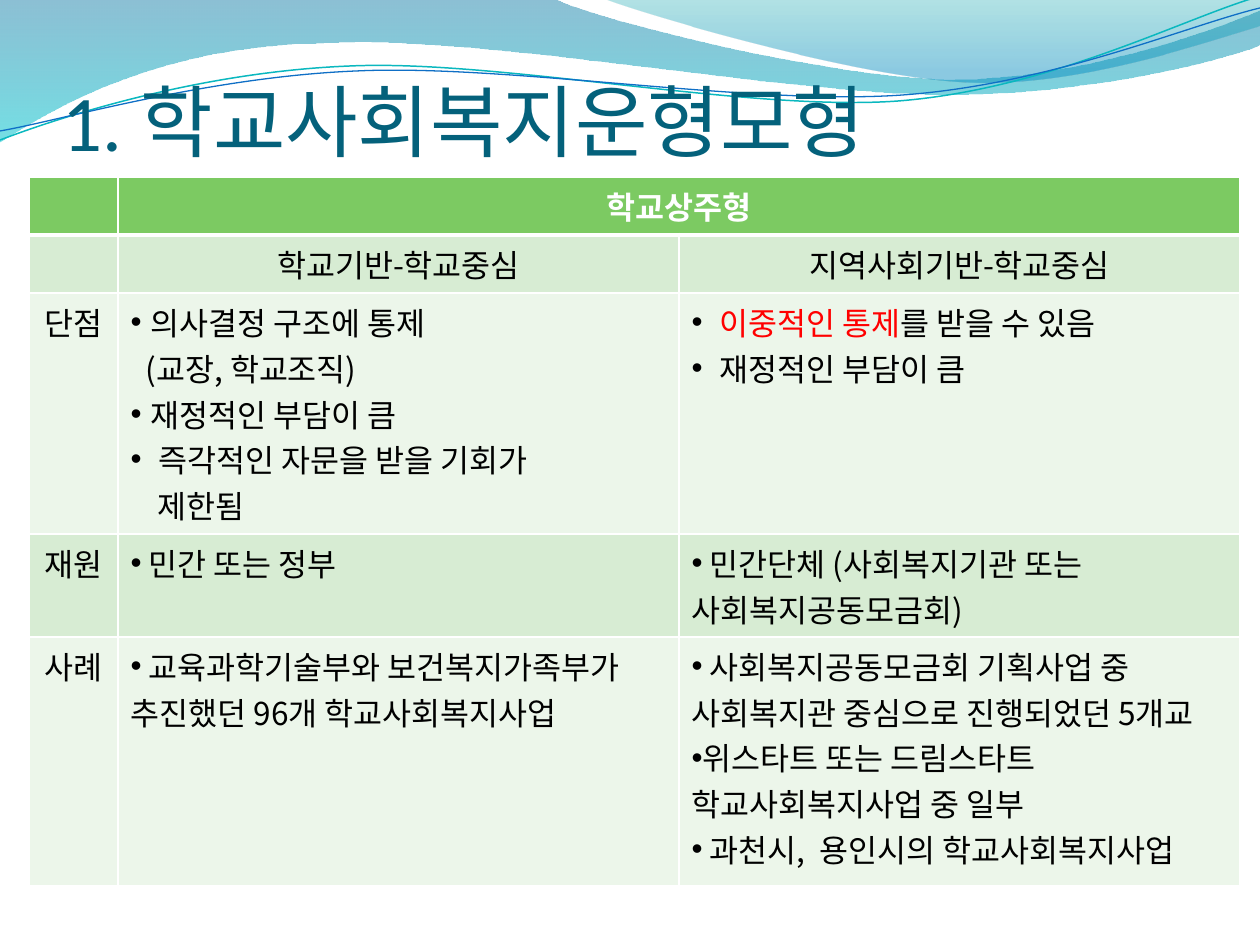
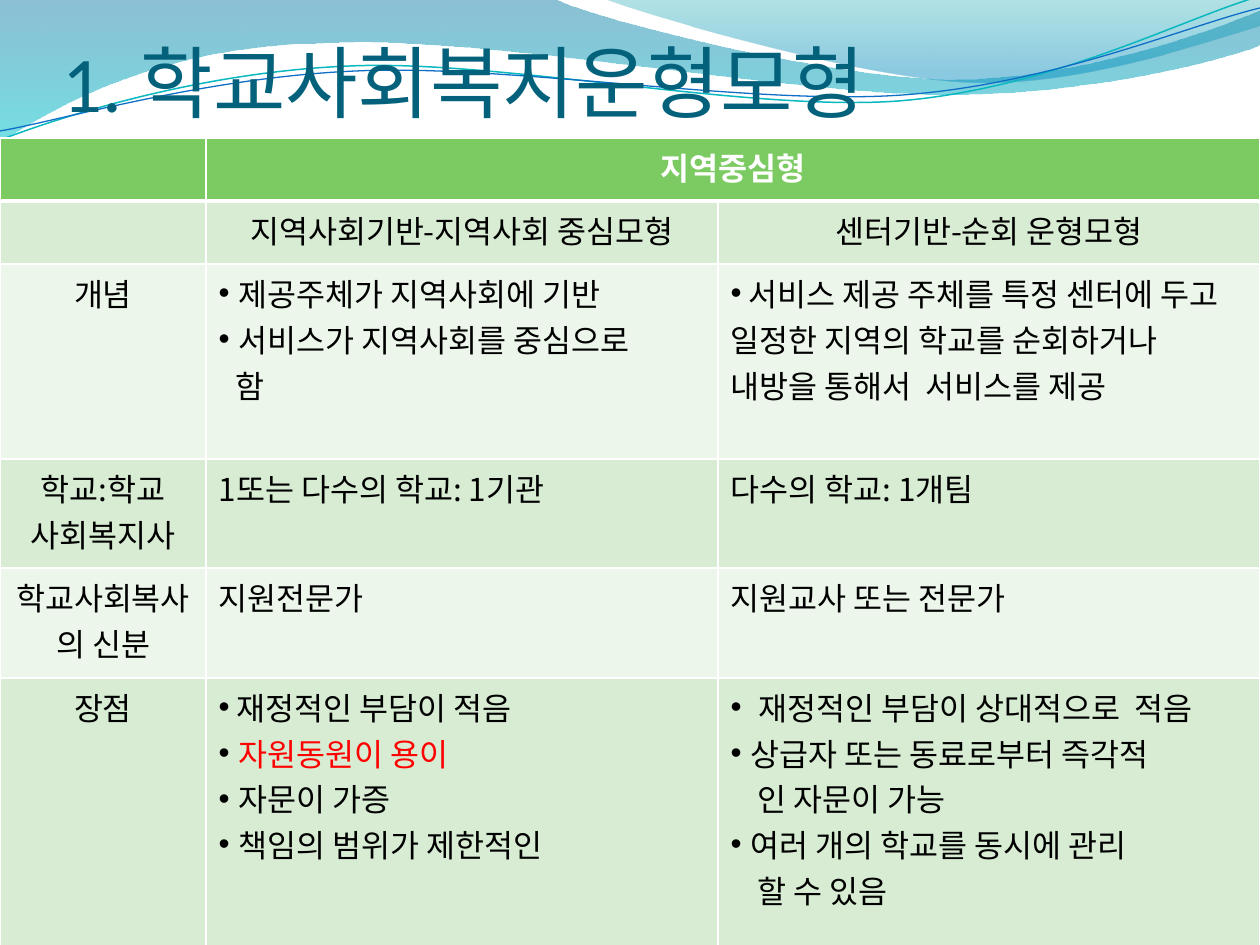
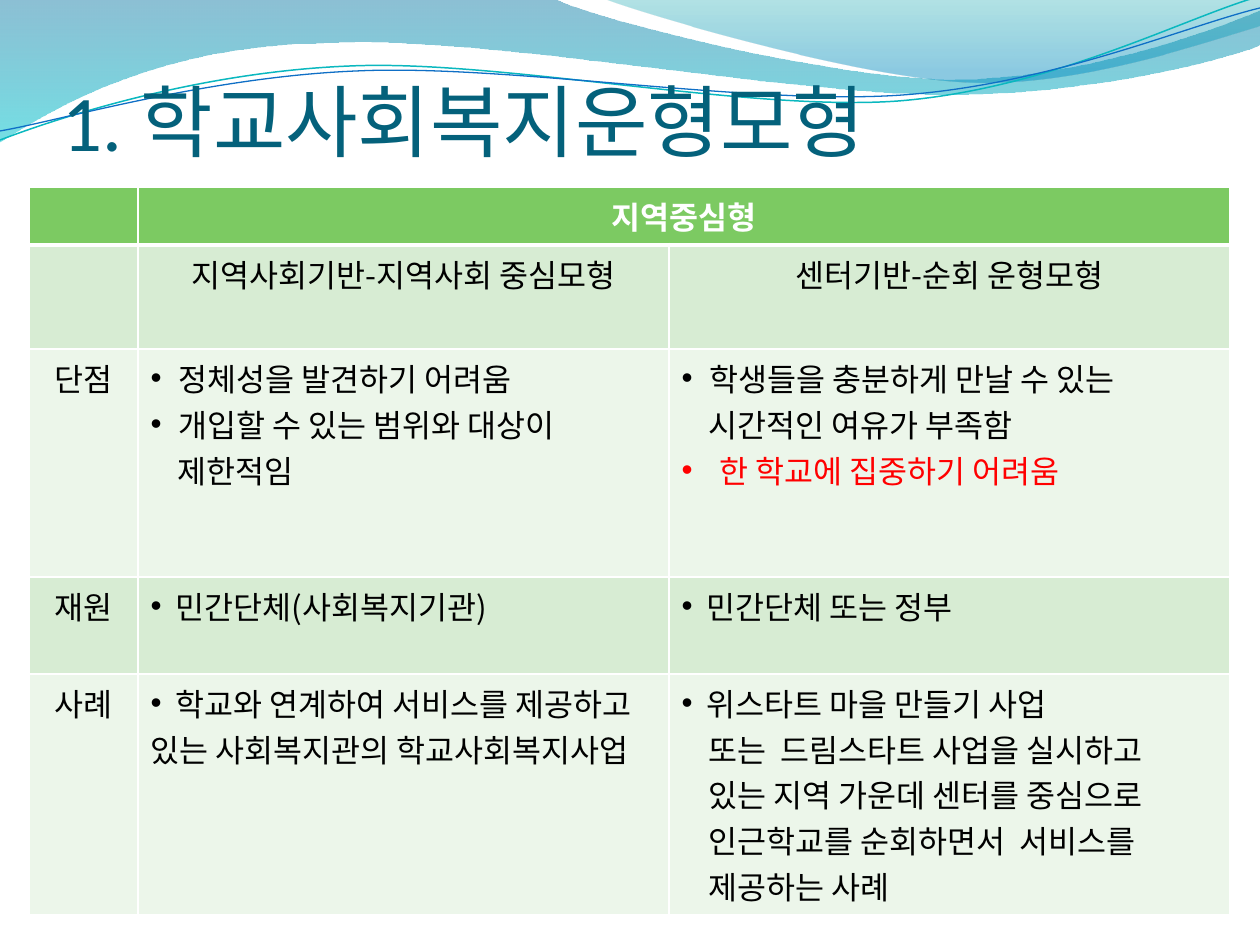
from typing import NamedTuple

from lxml import etree
from pptx import Presentation
from pptx import util as u
from pptx.dml.color import RGBColor
from pptx.enum import text
from pptx.oxml.ns import qn

PX = 914400 / 126
SLIDE_W, SLIDE_H = 1260, 945
BODY_FONT, TITLE_FONT = "Noto Sans CJK KR", "Calibri"
WHITE, BLACK, RED, TITLE_BLUE = "FFFFFF", "000000", "FF0000", "04617B"
HEADER, BANDS = "7CCA62", ("D7ECD3", "ECF6EA")
TITLE = "1. 학교사회복지운형모형"
NEAR, MIDDLE, FAR = 20, 25, 28  # distance from the bullet to its text
NEAR_MORE, FAR_MORE = 17, 27  # indent of a line that continues an item

# Each outline is a start point followed by lines (1 point) or Bézier curves (3 points).
BROAD_WAVE = [
    (0, 0), [(554, -1)],
    [(600, 21), (837, 79), (955, 79)], [(1075, 79), (1207, 33), (1260, 11)],
    [(1261, 45)],
    [(1239, 55), (1096, 96), (940, 94)], [(784, 94), (481, 35), (324, 43)],
    [(163, 45), (58, 105), (-1, 142)],
]
RIGHT_WAVE = [
    (604, -1), [(641, 14), (859, 78), (969, 82)],
    [(1079, 87), (1211, 40), (1260, 26)], [(1260, 0)],
]
TEAL_LINE = [
    (0, 140), [(60, 117), (199, 72), (349, 66)],
    [(498, 59), (747, 112), (898, 101)], [(1050, 89), (1182, 19), (1257, -3)],
]
BLUE_LINE = [
    (0, 131), [(59, 121), (207, 77), (357, 71)],
    [(508, 64), (752, 106), (903, 95)], [(1053, 84), (1186, 26), (1260, 8)],
]


class Line(NamedTuple):
    """A paragraph of a cell; text between asterisks is red."""
    text: str
    hang: int = 0
    bullet: str = ""  # colour of the bullet, if there is one


def item(words, hang=NEAR, color=BLACK):
    return Line(words, hang, color)


def flowing(words):
    """A bullet whose wrapped lines return to the cell's edge."""
    return Line(" " + words, 0, BLACK)


def px(n):
    return u.Emu(round(n * PX))


def rgb(color):
    return RGBColor.from_string(color)


def add_xml(parent, tag, **attributes):
    return etree.SubElement(parent, qn(tag), attributes)


def add_run(p, words, font, size, color, bold=False):
    r = p.add_run()
    r.text = words
    r.font.name, r.font.size, r.font.bold = font, u.Pt(size), bold
    r.font.color.rgb = rgb(color)
    add_xml(r.font._rPr, "a:ea", typeface=BODY_FONT)


def add_outline(s, outline, close):
    """Build the outline from straight lines, then join them by threes into curves."""
    start, *segments = outline
    builder = s.shapes.build_freeform(px(start[0]), px(start[1]))
    points = [(px(x), px(y)) for segment in segments for x, y in segment]
    builder.add_line_segments(points, close=close)
    sp = builder.convert_to_shape()
    sp.shadow.inherit = False
    lines = iter(list(sp._element.iter(qn("a:lnTo"))))
    for segment in segments:
        first, *others = [next(lines) for _ in segment]
        if others:
            curve = etree.Element(qn("a:cubicBezTo"))
            first.addprevious(curve)
            for line in (first, *others):
                curve.append(line[0])
                line.getparent().remove(line)
    return sp


def add_wave(s, outline, stops):
    """Add a wave filled from top to bottom with (position, colour, opacity) stops."""
    sp = add_outline(s, outline, True)
    sp.line.fill.background()
    sp.fill.gradient()
    sp.fill.gradient_angle = 270
    for stop, (position, color, _) in zip(sp.fill.gradient_stops, stops):
        stop.position = position
        stop.color.rgb = rgb(color)
    colors = sp._element.spPr.iter(qn("a:srgbClr"))
    for element, (_, _, opacity) in zip(colors, stops):
        add_xml(element, "a:alpha", val=str(opacity * 1000))


def add_curve(s, outline, color, width):
    sp = add_outline(s, outline, False)
    sp.fill.background()
    sp.line.color.rgb = rgb(color)
    sp.line.width = u.Pt(width)


def add_waves(s):
    add_wave(s, BROAD_WAVE, [(0, "0074A1", 45), (1, "00C6CF", 55)])
    add_wave(s, RIGHT_WAVE, [(0, "00A1A9", 30), (0.8, "008BBF", 45)])
    add_curve(s, TEAL_LINE, "0AB8BF", 0.85)
    add_curve(s, BLUE_LINE, "0F6FC6", 0.75)


def add_title(s, x, y, w, h):
    tf = s.shapes.add_textbox(px(x), px(y), px(w), px(h)).text_frame
    tf.word_wrap = True
    tf.vertical_anchor = text.MSO_ANCHOR.BOTTOM
    tf.margin_left = tf.margin_right = tf.margin_bottom = 0
    add_run(tf.paragraphs[0], TITLE, TITLE_FONT, 45, TITLE_BLUE)


def style_cell(cell, row):
    tcPr = cell._tc.get_or_add_tcPr()
    thick = {0: "a:lnB", 1: "a:lnT"}.get(row)
    for tag in ("a:lnL", "a:lnR", "a:lnT", "a:lnB"):
        ln = add_xml(tcPr, tag, w=str(u.Pt(3 if tag == thick else 1)))
        add_xml(add_xml(ln, "a:solidFill"), "a:srgbClr", val=WHITE)
    cell.fill.solid()
    cell.fill.fore_color.rgb = rgb(HEADER if row == 0 else BANDS[(row - 1) % 2])


def write_line(p, line, centred, header):
    p.alignment = text.PP_ALIGN.CENTER if centred else text.PP_ALIGN.LEFT
    pPr = p._p.get_or_add_pPr()
    pPr.set("marL", str(px(line.hang)))
    pPr.set("indent", str(px(-line.hang if line.bullet else 0)))
    if line.bullet:
        add_xml(add_xml(pPr, "a:buClr"), "a:srgbClr", val=line.bullet)
        add_xml(pPr, "a:buFont", typeface="Arial")
        add_xml(pPr, "a:buChar", char="•")
    for i, words in enumerate(line.text.split("*")):
        if words:
            color = WHITE if header else RED if i % 2 else BLACK
            add_run(p, words, BODY_FONT, 18, color, header)


def add_model_table(s, x, y, widths, heights, rows):
    frame = s.shapes.add_table(len(heights), len(widths), px(x), px(y),
                               px(sum(widths)), px(sum(heights)))
    table = frame.table
    table.horz_banding = False
    for column, width in zip(table.columns, widths):
        column.width = px(width)
    for row, height in zip(table.rows, heights):
        row.height = px(height)
    table.cell(0, 1).merge(table.cell(0, 2))
    for i, contents in enumerate(rows):
        for j, content in enumerate(contents):
            cell = table.cell(i, j)
            style_cell(cell, i)
            lines = content if isinstance(content, list) else [content]
            for k, line in enumerate(lines):
                if not line:
                    continue
                tf = cell.text_frame
                p = tf.add_paragraph() if k else tf.paragraphs[0]
                line = Line(line) if isinstance(line, str) else line
                write_line(p, line, i < 2 or j == 0, i == 0)


RESIDENT_ROWS = [
    ["", "학교상주형", ""],
    ["", "학교기반-학교중심", "지역사회기반-학교중심"],
    ["단점",
     [item("의사결정 구조에 통제"), Line("(교장, 학교조직)", 15),
      item("재정적인 부담이 큼"),
      item("즉각적인 자문을 받을 기회가", FAR), Line("제한됨", FAR_MORE)],
     [item("*이중적인 통제*를 받을 수 있음", FAR), item("재정적인 부담이 큼", FAR)]],
    ["재원", flowing("민간 또는 정부"),
     flowing("민간단체 (사회복지기관 또는 사회복지공동모금회)")],
    ["사례",
     flowing("교육과학기술부와 보건복지가족부가 추진했던 96개 학교사회복지사업"),
     [flowing("사회복지공동모금회 기획사업 중 사회복지관 중심으로 진행되었던 5개교"),
      Line("위스타트 또는 드림스타트 학교사회복지사업 중 일부", 0, BLACK),
      flowing("과천시,  용인시의 학교사회복지사업")]],
]
COMMUNITY_HEAD = [
    ["", "지역중심형", ""],
    ["", "지역사회기반-지역사회 중심모형", "센터기반-순회 운형모형"],
]
COMMUNITY_STRENGTHS = COMMUNITY_HEAD + [
    ["개념",
     [item("제공주체가 지역사회에 기반"),
      item("서비스가 지역사회를 중심으로"), Line("함", NEAR_MORE)],
     flowing("서비스 제공 주체를 특정 센터에 두고 일정한 지역의 학교를 "
             "순회하거나 내방을 통해서  서비스를 제공")],
    [["학교:학교", "사회복지사"], "1또는 다수의 학교: 1기관", "다수의 학교: 1개팀"],
    ["학교사회복사의 신분", "지원전문가", "지원교사 또는 전문가"],
    ["장점",
     [flowing("재정적인 부담이 적음"), item("*자원동원이 용이*"),
      item("자문이 가증"), item("책임의 범위가 제한적인")],
     [item("재정적인 부담이 상대적으로  적음", FAR),
      item("상급자 또는 동료로부터 즉각적"), Line("인 자문이 가능", FAR_MORE),
      item("여러 개의 학교를 동시에 관리"), Line("할 수 있음", FAR_MORE)]],
]
COMMUNITY_WEAKNESSES = COMMUNITY_HEAD + [
    ["단점",
     [item("정체성을 발견하기 어려움", FAR),
      item("개입할 수 있는 범위와 대상이", FAR), Line("제한적임", FAR_MORE)],
     [item("학생들을 충분하게 만날 수 있는", FAR),
      Line("시간적인 여유가 부족함", FAR_MORE),
      item("*한 학교에 집중하기 어려움*", 38, RED)]],
    ["재원", item("민간단체(사회복지기관)", MIDDLE), item("민간단체 또는 정부", MIDDLE)],
    ["사례",
     flowing(" 학교와 연계하여 서비스를 제공하고 있는 사회복지관의 학교사회복지사업"),
     [item("위스타트 마을 만들기 사업", MIDDLE),
      Line("또는  드림스타트 사업을 실시하고", FAR_MORE),
      Line("있는 지역 가운데 센터를 중심으로", FAR_MORE),
      Line("인근학교를 순회하면서  서비스를", FAR_MORE),
      Line("제공하는 사례", FAR_MORE)]],
]

# Title height, then the table's left, top, column widths, row heights and rows.
SLIDES = [
    (108, 29, 177, [89, 561, 561], [58, 58, 241, 103, 249], RESIDENT_ROWS),
    (69, 0, 138, [206, 512, 542], [63, 63, 195, 109, 110, 272], COMMUNITY_STRENGTHS),
    (108, 29, 187, [109, 531, 561], [58, 104, 228, 97, 241], COMMUNITY_WEAKNESSES),
]


def main():
    prs = Presentation()
    prs.slide_width, prs.slide_height = px(SLIDE_W), px(SLIDE_H)
    for title_height, *table in SLIDES:
        s = prs.slides.add_slide(prs.slide_layouts[6])
        add_waves(s)
        add_title(s, 63, 59, 1134, title_height)
        add_model_table(s, *table)
    prs.save("out.pptx")


if __name__ == "__main__":
    main()
